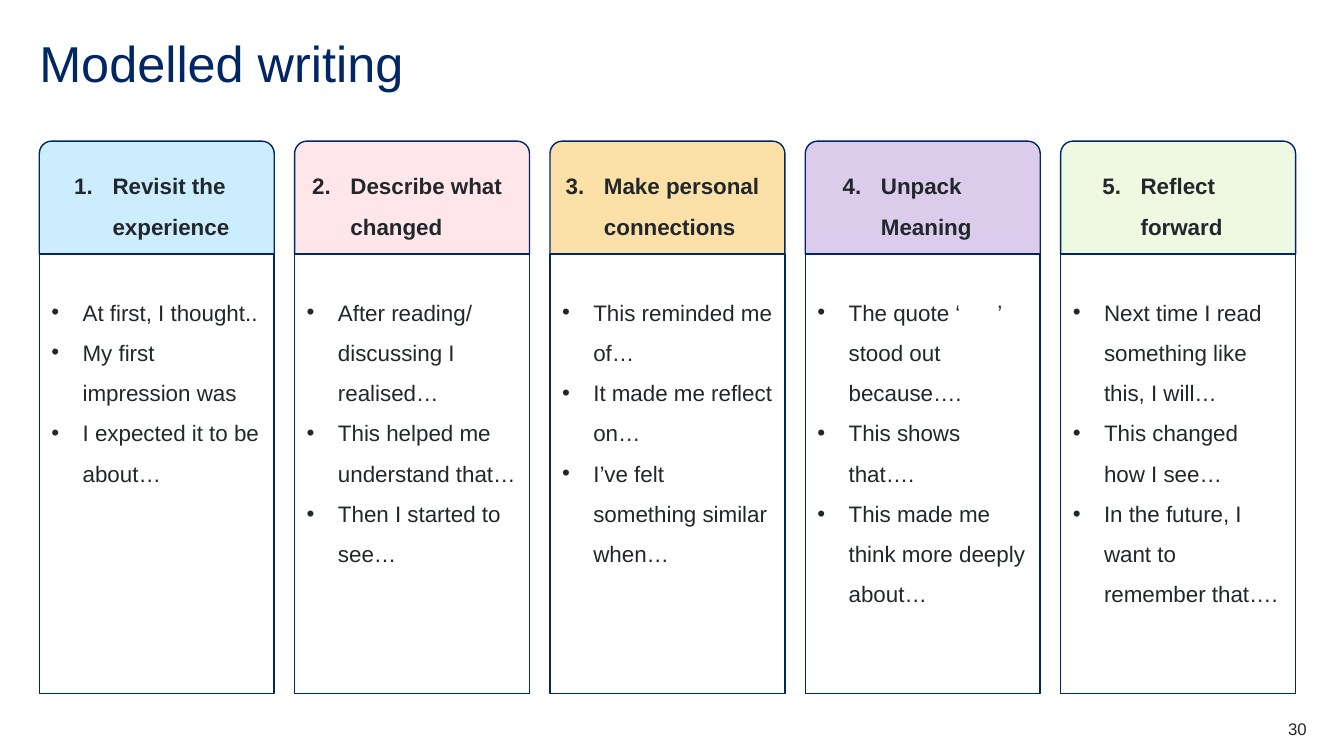
from pptx import Presentation, util as u
from pptx.dml.color import RGBColor
from pptx.enum import shapes, text
from pptx.oxml.ns import qn
from lxml import etree

NAVY, INK, WHITE = "002664", "22272B", "FFFFFF"
STAGES = [
    ("Revisit the experience", "CBEDFD", 0.1,
     ["At first, I thought..", "My first impression was", "I expected it to be about…"]),
    ("Describe what changed", "FFE6EA", 0.1,
     ["After reading/\vdiscussing I realised…", "This helped me understand that…",
      "Then I started to see…"]),
    ("Make personal connections", "FBE1A7", 0.1,
     ["This reminded me of…", "It made me reflect on…",
      "I’ve felt something similar when…"]),
    ("Unpack \vMeaning", "DBCCEC", 0.31,
     ["The quote ‘      ’ stood out because….", "This shows that….",
      "This made me think more deeply about…"]),
    ("Reflect forward", "EDF9E0", 0.31,
     ["Next time I read something like this, I will…", "This changed how I see…",
      "In the future, I want to remember that…."]),
]


def colour(hex_value):
    return RGBColor.from_string(hex_value)


def write(frame, lines, insets, size, ink, bold=False, spacing=1.0,
          align=text.PP_ALIGN.LEFT, anchor=text.MSO_ANCHOR.TOP):
    left, top, right, bottom = map(u.Inches, insets)
    frame_format = {"margin_left": left, "margin_top": top, "margin_right": right,
                    "margin_bottom": bottom, "word_wrap": True, "vertical_anchor": anchor}
    for key, value in frame_format.items():
        setattr(frame, key, value)
    frame.text = "\n".join(lines)
    for paragraph in frame.paragraphs:
        paragraph.line_spacing = spacing
        paragraph.alignment = align
        for run in paragraph.runs:
            font_format = {"name": "Arial", "size": u.Pt(size), "bold": bold}
            for key, value in font_format.items():
                setattr(run.font, key, value)
            run.font.color.rgb = colour(ink)


def mark(paragraph, indent, tag, **marker):
    properties = paragraph._p.get_or_add_pPr()
    properties.set("marL", str(u.Inches(indent)))
    properties.set("indent", str(-u.Inches(indent)))
    font = etree.SubElement(properties, qn("a:buFont"))
    font.set("typeface", "Arial")
    bullet = etree.SubElement(properties, qn(tag))
    for key, value in marker.items():
        bullet.set(key, value)


def add_label(slide, box, wording, size, ink, **style):
    label = slide.shapes.add_textbox(*map(u.Inches, box))
    write(label.text_frame, [wording], (0, 0, 0, 0), size, ink, **style)


def add_panel(slide, preset, box, fill):
    panel = slide.shapes.add_shape(preset, *map(u.Inches, box))
    panel.shadow.inherit = False
    panel.fill.solid()
    panel.fill.fore_color.rgb = colour(fill)
    panel.line.color.rgb = colour(NAVY)
    panel.line.width = u.Pt(1)
    return panel


def add_stage(slide, box, number, heading, tint, heading_right, starters):
    left, top, width, height = box
    heading_height = 1.12
    header = add_panel(slide, shapes.MSO_SHAPE.ROUND_2_SAME_RECTANGLE,
                       (left, top, width, heading_height), tint)
    header.adjustments[0] = 0.11
    header.adjustments[1] = 0
    write(header.text_frame, [heading], (0, 0.05, heading_right, 0.05), 16, INK,
          bold=True, spacing=1.5, anchor=text.MSO_ANCHOR.MIDDLE)
    header.text_frame._txBody.bodyPr.set("anchorCtr", "1")
    mark(header.text_frame.paragraphs[0], 0.38, "a:buAutoNum",
         type="arabicPeriod", startAt=str(number))

    body = add_panel(slide, shapes.MSO_SHAPE.RECTANGLE,
                     (left, top + heading_height, width, height - heading_height), WHITE)
    write(body.text_frame, starters, (0.12, 0.31, 0.12, 0.05), 16, INK, spacing=1.5)
    for paragraph in body.text_frame.paragraphs:
        mark(paragraph, 0.31, "a:buChar", char="•")


def add_stages(slide, box):
    left, top, width, height = box
    stage_width = 2.33
    pitch = (width - stage_width) / (len(STAGES) - 1)
    for index, stage in enumerate(STAGES):
        add_stage(slide, (left + index * pitch, top, stage_width, height),
                  index + 1, *stage)


def main():
    deck = Presentation()
    deck.slide_width, deck.slide_height = u.Inches(13.33), u.Inches(7.5)
    slide = deck.slides.add_slide(deck.slide_layouts[6])
    add_label(slide, (0.39, 0.39, 12.56, 0.6), "Modelled writing", 36, NAVY, spacing=0.9)
    add_stages(slide, (0.39, 1.4, 12.46, 5.48))
    add_label(slide, (12.17, 7.13, 0.79, 0.2), "30", 12, INK, align=text.PP_ALIGN.RIGHT)
    deck.save("out.pptx")


if __name__ == "__main__":
    main()
